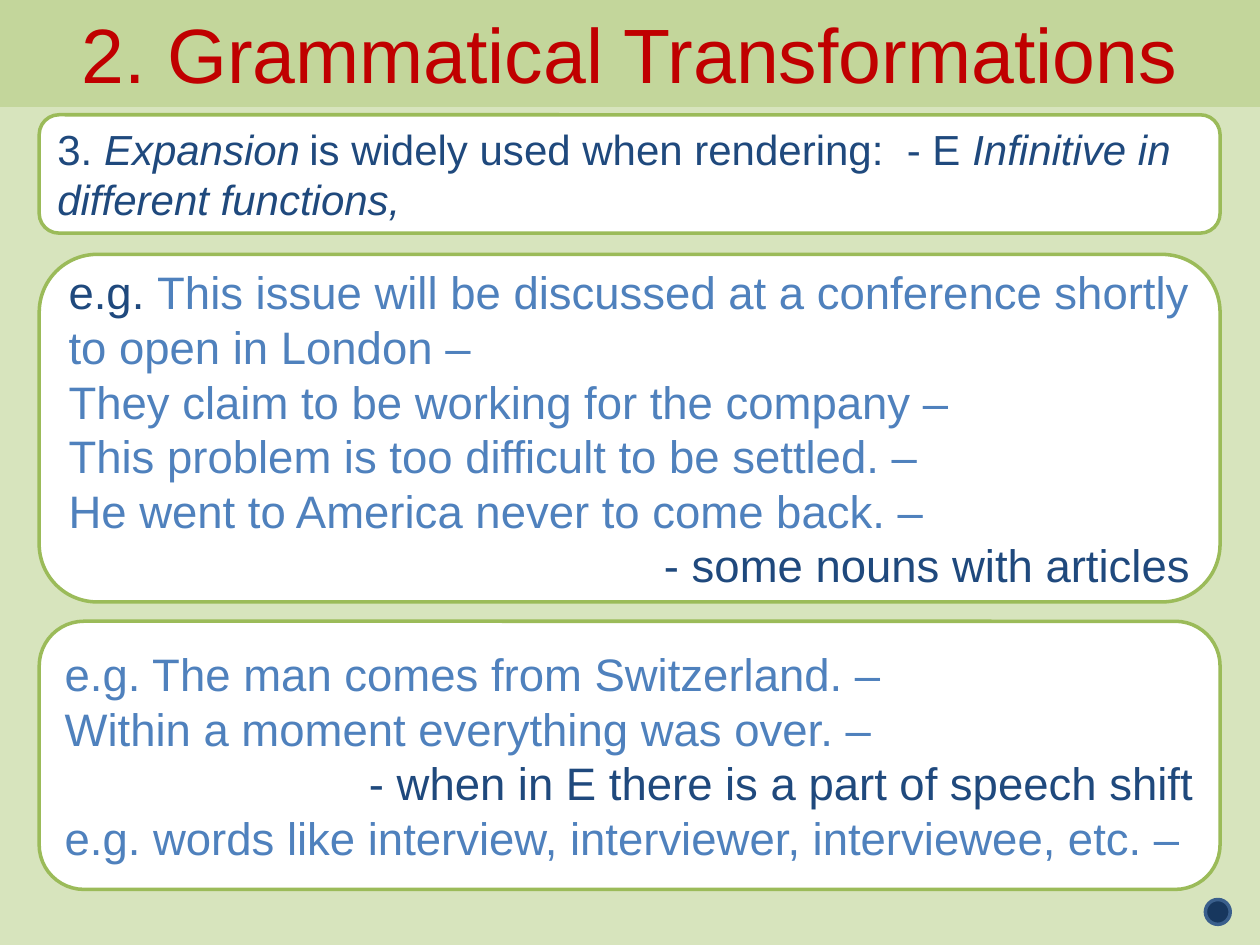
from pptx import Presentation
from pptx.dml.color import RGBColor
from pptx.enum import shapes, text
from pptx.util import Pt

FONT = "Arial"
BACKGROUND = RGBColor(0xD7, 0xE4, 0xBD)
BAND = RGBColor(0xC3, 0xD6, 0x9B)
GREEN = RGBColor(0x9B, 0xBB, 0x59)
WHITE = RGBColor(0xFF, 0xFF, 0xFF)
RED = RGBColor(0xC0, 0x00, 0x00)
NAVY = RGBColor(0x1F, 0x49, 0x7D)
BLUE = RGBColor(0x4F, 0x81, 0xBD)
DOT_FILL = RGBColor(0x17, 0x37, 0x5E)
DOT_LINE = RGBColor(0x3A, 0x5F, 0x8C)

LEFT = text.PP_ALIGN.LEFT
RIGHT = text.PP_ALIGN.RIGHT
PANEL_LEFT, PANEL_WIDTH = 22.4, 674.8

RULE = [(LEFT, [("3. ", NAVY, False), ("Expansion", NAVY, True),
                ("\tis widely used when rendering:  - E ", NAVY, False),
                ("Infinitive in different functions,", NAVY, True)])]
INFINITIVES = [
    (LEFT, [("e.g. ", NAVY, False),
            ("This issue will be discussed at a conference shortly to open in London –", BLUE, False)]),
    (LEFT, [("They claim to be working for the company –", BLUE, False)]),
    (LEFT, [("This problem is too difficult to be settled. –", BLUE, False)]),
    (LEFT, [("He went to America never to come back. –", BLUE, False)]),
    (RIGHT, [("- some nouns with articles", NAVY, False)]),
]
NOUNS = [
    (LEFT, [("e.g. The man comes from Switzerland. –", BLUE, False)]),
    (LEFT, [("Within a moment everything was over. –", BLUE, False)]),
    (RIGHT, [("- when in E there is a part of speech shift", NAVY, False)]),
    (LEFT, [("e.g. words like interview, interviewer, interviewee, etc. –", BLUE, False)]),
]
PANELS = [(65.6, 67.6, 24, RULE), (145.4, 198.6, 26, INFINITIVES), (355, 153.2, 26, NOUNS)]


def paint(shape, fill, line):
    shape.fill.solid()
    shape.fill.fore_color.rgb = fill
    shape.line.color.rgb = line
    shape.line.width = Pt(2)


def add_outlined(slide, kind, box, fill, line):
    shape = slide.shapes.add_shape(kind, *map(Pt, box))
    shape.shadow.inherit = False
    paint(shape, fill, line)
    return shape


def place_title(slide, box, wording):
    title = slide.shapes.title
    title.left, title.top, title.width, title.height = map(Pt, box)
    paint(title, BAND, BAND)
    frame = title.text_frame
    frame.text = wording
    frame.auto_size = text.MSO_AUTO_SIZE.NONE
    frame.vertical_anchor = text.MSO_ANCHOR.MIDDLE
    paragraph = frame.paragraphs[0]
    paragraph.alignment = text.PP_ALIGN.CENTER
    paragraph.font.name = FONT
    paragraph.font.size = Pt(44)
    paragraph.font.color.rgb = RED


def add_panel(slide, box, size, lines):
    panel = add_outlined(slide, shapes.MSO_SHAPE.ROUNDED_RECTANGLE, box, WHITE, GREEN)
    frame = panel.text_frame
    frame.word_wrap = True
    frame.vertical_anchor = text.MSO_ANCHOR.MIDDLE
    for index, (alignment, parts) in enumerate(lines):
        paragraph = frame.add_paragraph() if index else frame.paragraphs[0]
        paragraph.alignment = alignment
        paragraph.font.name = FONT
        paragraph.font.size = Pt(size)
        for wording, color, italic in parts:
            run = paragraph.add_run()
            run.text = wording
            run.font.color.rgb = color
            if italic:
                run.font.italic = True


def main():
    presentation = Presentation()
    presentation.slide_width, presentation.slide_height = Pt(720), Pt(540)
    slide = presentation.slides.add_slide(presentation.slide_layouts[5])
    slide.background.fill.solid()
    slide.background.fill.fore_color.rgb = BACKGROUND

    place_title(slide, (0, 0, 720, 60.4), "2. Grammatical Transformations")
    add_outlined(slide, shapes.MSO_SHAPE.OVAL, (688.8, 514, 14.2, 14.2), DOT_FILL, DOT_LINE)
    for top, height, size, lines in PANELS:
        add_panel(slide, (PANEL_LEFT, top, PANEL_WIDTH, height), size, lines)

    presentation.save("out.pptx")


if __name__ == "__main__":
    main()
